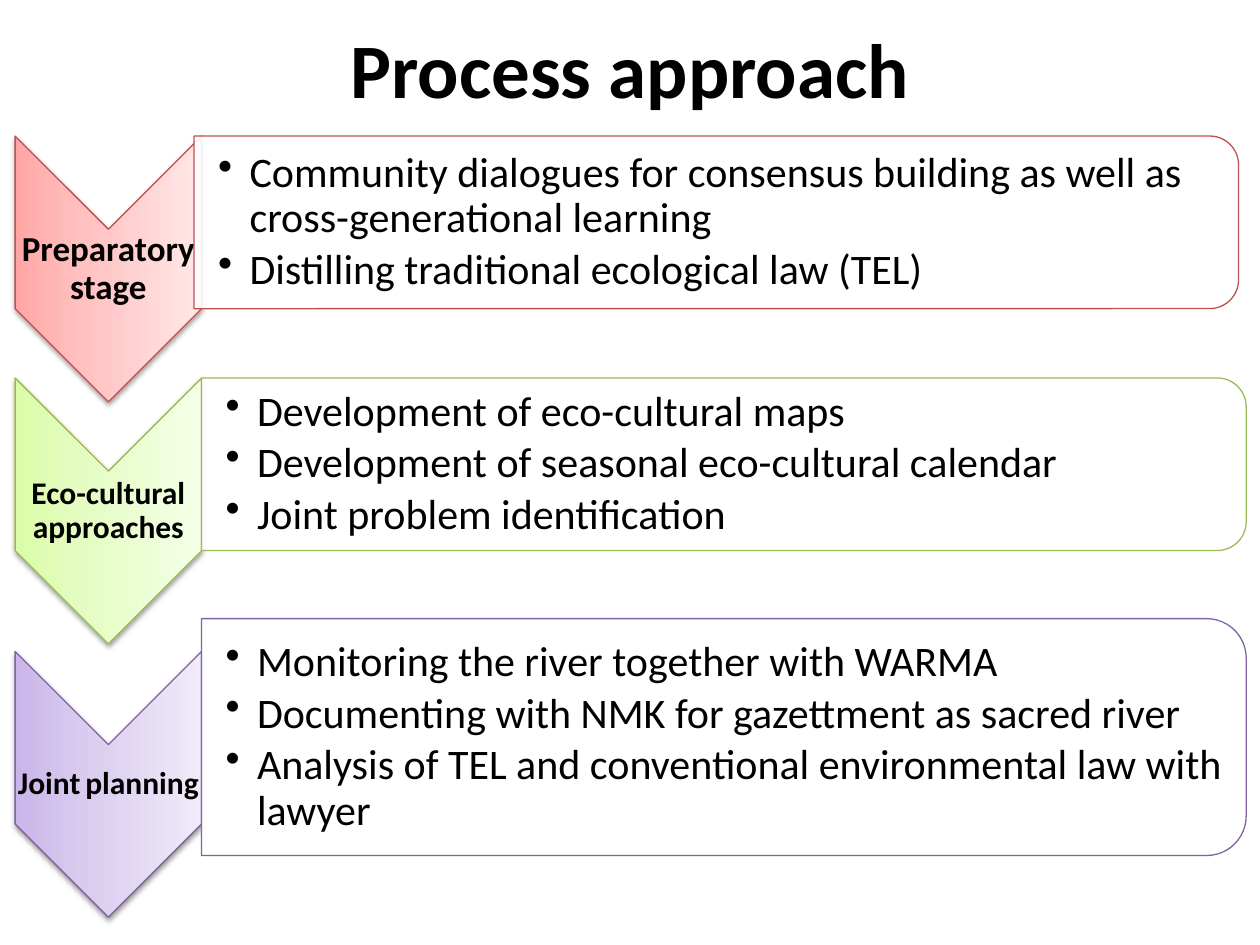
from lxml import etree
from pptx import Presentation
from pptx.dml.color import RGBColor
from pptx.enum.shapes import MSO_SHAPE
from pptx.enum.text import MSO_ANCHOR, PP_ALIGN
from pptx.oxml import parse_xml
from pptx.oxml.ns import nsdecls, qn
from pptx.util import Inches, Pt

CHEVRON = MSO_SHAPE.CHEVRON
ROUNDED_SIDE = MSO_SHAPE.ROUND_2_SAME_RECTANGLE
MIDDLE = MSO_ANCHOR.MIDDLE
CENTER = PP_ALIGN.CENTER

BLACK = RGBColor(0, 0, 0)
WHITE = RGBColor(255, 255, 255)
RED = RGBColor(0xC0, 0x50, 0x4D)
GREEN = RGBColor(0x9B, 0xBB, 0x59)
PURPLE = RGBColor(0x80, 0x64, 0xA2)
# Gradient stops at 0, 35 and 100 percent, from the bottom up
RED_TINTS = [RGBColor(0xFF, 0xA6, 0xA5), RGBColor(0xFF, 0xC0, 0xBF), RGBColor(0xFF, 0xE7, 0xE7)]
GREEN_TINTS = [RGBColor(0xDA, 0xFD, 0xA7), RGBColor(0xE4, 0xFC, 0xC2), RGBColor(0xF5, 0xFF, 0xE7)]
PURPLE_TINTS = [RGBColor(0xC9, 0xB5, 0xE8), RGBColor(0xD8, 0xCB, 0xEE), RGBColor(0xF0, 0xEA, 0xF9)]

FONT = "Calibri"
SLIDE_WIDTH, SLIDE_HEIGHT = 10, 7.5
CHEVRON_LEFT, CHEVRON_WIDTH, CHEVRON_HEIGHT = 0.12, 1.48, 2.11
PANEL_WIDTH = 8.29

# Label runs (text, size), line colour, tints, chevron top, panel (left, top, height), bullets
STAGES = [
    ([("Preparatory stage", 20)], RED, RED_TINTS, 1.08, (1.54, 1.08, 1.37),
     ["Community dialogues for consensus building as well as cross-generational learning",
      "Distilling traditional ecological law (TEL)"]),
    ([("Eco-cultural approaches", 18)], GREEN, GREEN_TINTS, 3, (1.6, 3, 1.37),
     ["Development of eco-cultural maps",
      "Development of seasonal eco-cultural calendar",
      "Joint problem identification"]),
    ([("Joint", 18), (" ", 12), ("planning", 18)], PURPLE, PURPLE_TINTS, 5.17, (1.6, 4.91, 1.88),
     ["Monitoring the river together with WARMA",
      "Documenting with NMK for gazettment as sacred river",
      "Analysis of TEL and conventional environmental law with lawyer"]),
]


def format_run(run, size, bold=False):
    run.font.name = FONT
    run.font.size = Pt(size)
    run.font.bold = bold
    run.font.color.rgb = BLACK


def add_turned_shape(slide, kind, left, top, width, height, line_color):
    """Place a shape turned by 90 degrees so that it covers the given box."""
    shape = slide.shapes.add_shape(
        kind, Inches(left + (width - height) / 2), Inches(top + (height - width) / 2),
        Inches(height), Inches(width))
    shape.rotation = 90
    shape.shadow.inherit = False
    shape.line.color.rgb = line_color
    shape.line.width = Pt(0.75)
    return shape


def add_text_frame(slide, left, top, width, height, left_margin, margin):
    box = slide.shapes.add_textbox(Inches(left), Inches(top), Inches(width), Inches(height))
    frame = box.text_frame
    frame.word_wrap = True
    frame.vertical_anchor = MIDDLE
    frame.margin_left = Inches(left_margin)
    frame.margin_right = frame.margin_top = frame.margin_bottom = Inches(margin)
    return frame


def set_gradient_and_shadow(shape, tints):
    shape.fill.gradient()
    gradient = shape.fill._xPr.find(qn("a:gradFill"))
    stops = "".join(
        f'<a:gs pos="{position}"><a:srgbClr val="{color}"/></a:gs>'
        for position, color in zip((0, 35000, 100000), tints))
    gradient.getparent().replace(gradient, parse_xml(
        f'<a:gradFill {nsdecls("a")} rotWithShape="1"><a:gsLst>{stops}</a:gsLst>'
        '<a:lin ang="16200000" scaled="0"/></a:gradFill>'))
    effects = shape._element.spPr.find(qn("a:effectLst"))
    effects.append(parse_xml(
        f'<a:outerShdw {nsdecls("a")} blurRad="{Pt(3.1)}" dist="{Pt(1.6)}" dir="5400000" '
        'rotWithShape="0"><a:srgbClr val="000000"><a:alpha val="38000"/></a:srgbClr></a:outerShdw>'))


def add_stage_chevron(slide, left, top, width, height, label, line_color, tints):
    chevron = add_turned_shape(slide, CHEVRON, left, top, width, height, line_color)
    set_gradient_and_shadow(chevron, tints)
    # The label fills the solid band between the notch and the point
    frame = add_text_frame(slide, left, top + width / 2, width, height - width, 0.01, 0.01)
    paragraph = frame.paragraphs[0]
    paragraph.alignment = CENTER
    paragraph.line_spacing = 0.9
    for text, size in label:
        run = paragraph.add_run()
        run.text = text
        format_run(run, size, bold=True)


def add_bullet_panel(slide, left, top, width, height, bullets, line_color):
    panel = add_turned_shape(slide, ROUNDED_SIDE, left, top, width, height, line_color)
    panel.fill.solid()
    panel.fill.fore_color.rgb = WHITE
    color = panel.fill._xPr.find(qn("a:solidFill"))[0]
    etree.SubElement(color, qn("a:alpha")).set("val", "90000")
    # The list stays clear of the rounded corners
    inset = height * 0.05
    frame = add_text_frame(slide, left, top + inset, width - inset, height - 2 * inset, 0.19, 0.02)
    frame.text = "\n".join(bullets)
    for paragraph in frame.paragraphs:
        paragraph.line_spacing = 0.9
        paragraph.space_after = Pt(3.6)
        format_run(paragraph.runs[0], 24)
        properties = paragraph._p.get_or_add_pPr()
        properties.set("marL", str(Inches(0.25)))
        properties.set("indent", str(-Inches(0.25)))
        etree.SubElement(properties, qn("a:buChar")).set("char", "•")


def add_title(slide, left, top, width, height, text):
    title = slide.shapes.title
    title.left, title.top = Inches(left), Inches(top)
    title.width, title.height = Inches(width), Inches(height)
    title.text_frame.text = text
    title.text_frame.vertical_anchor = MIDDLE
    paragraph = title.text_frame.paragraphs[0]
    paragraph.alignment = CENTER
    format_run(paragraph.runs[0], 44, bold=True)


def main():
    presentation = Presentation()
    presentation.slide_width = Inches(SLIDE_WIDTH)
    presentation.slide_height = Inches(SLIDE_HEIGHT)
    slide = presentation.slides.add_slide(presentation.slide_layouts[5])
    add_title(slide, 0, 0, SLIDE_WIDTH, 1.07, "Process approach")
    for label, line_color, tints, chevron_top, (left, top, height), bullets in STAGES:
        add_stage_chevron(slide, CHEVRON_LEFT, chevron_top, CHEVRON_WIDTH, CHEVRON_HEIGHT,
                          label, line_color, tints)
        add_bullet_panel(slide, left, top, PANEL_WIDTH, height, bullets, line_color)
    presentation.save("out.pptx")


if __name__ == "__main__":
    main()
